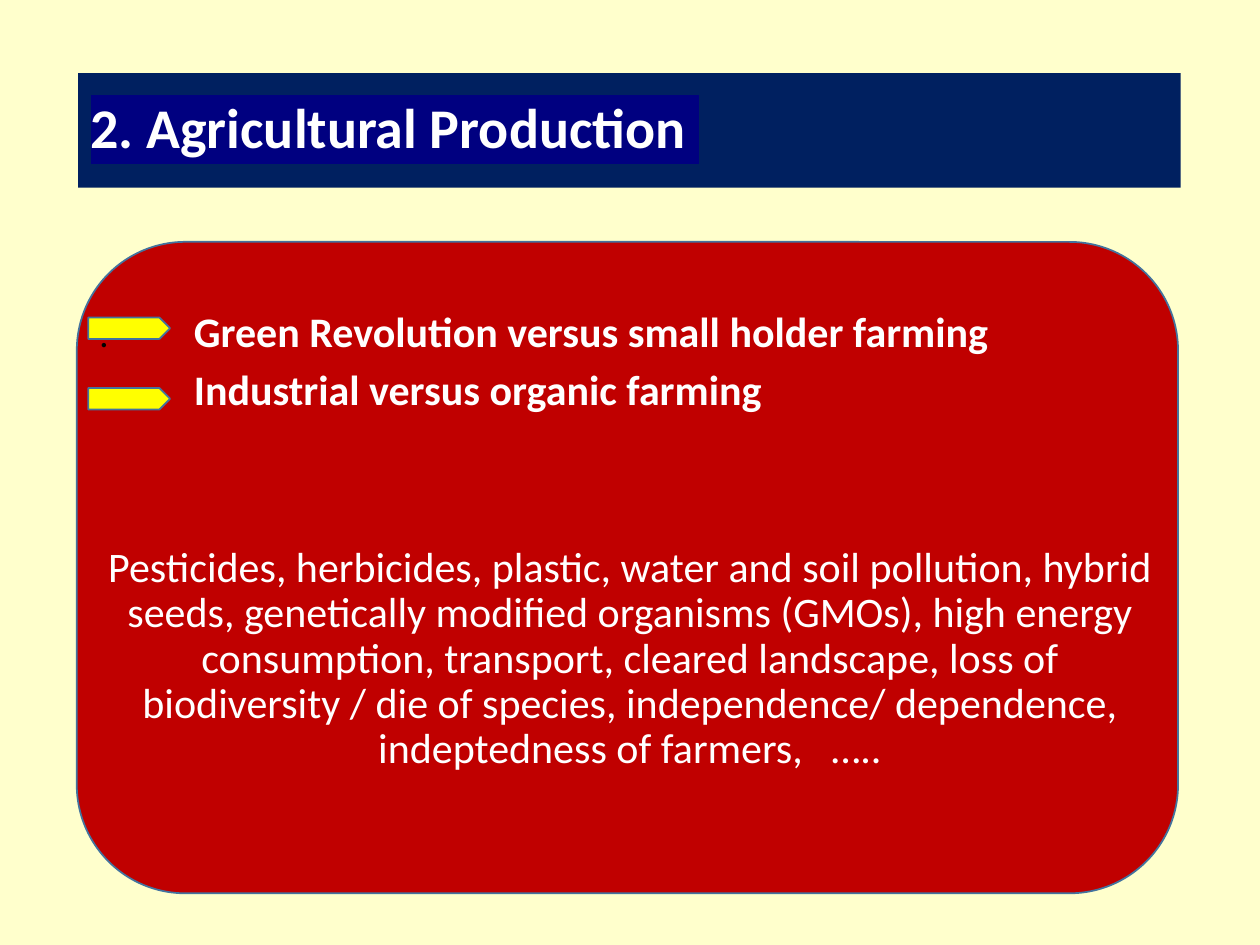
from pptx import Presentation
from pptx.dml.color import RGBColor as RGB
from pptx.enum.shapes import MSO_SHAPE as Kind
from pptx.enum.text import MSO_ANCHOR as Anchor, PP_ALIGN as Align
from pptx.oxml.ns import qn
from pptx.util import Inches, Pt
from lxml.etree import SubElement

TITLE = "2. Agricultural Production "
TOPICS = [
    (".", "Green Revolution versus small holder farming"),
    ("", "Industrial versus organic farming"),
]
IMPACTS = (
    "Pesticides, herbicides, plastic, water and soil pollution, hybrid seeds, "
    "genetically modified organisms (GMOs), high energy consumption, transport, "
    "cleared landscape, loss of biodiversity / die of species, "
    "independence/ dependence, indeptedness of farmers,   ….."
)
THEME = dict(
    font="Calibri", paper="FFFFCC", navy="002060", mark="000080", panel="C00000",
    edge="43739E", arrow="FFFF00", light="FFFFFF", dark="000000",
    head=32, body=24, dot=21, gap=7.5, leap=75,
)


def color(name):
    return RGB.from_string(THEME[name])


def write(para, text, size="body", ink="light", bold=False, mark=None):
    run = para.add_run()
    run.text = text
    font = run.font
    font.size, font.bold = Pt(THEME[size]), bold
    font.color.rgb = color(ink)
    if mark:
        glow = SubElement(font._element, qn("a:highlight"))
        SubElement(glow, qn("a:srgbClr")).set("val", THEME[mark])
    font.name = THEME["font"]


def layout(para, align=Align.LEFT, before=None, hang=0):
    para.alignment = align
    para.line_spacing = 0.9
    if before:
        para.space_before = Pt(THEME[before])
    if hang:
        props = para._p.get_or_add_pPr()
        props.set("marL", str(Inches(hang)))
        props.set("indent", str(-Inches(hang)))
    return para


def draw(slide, kind, box, fill, edge=None):
    shape = slide.shapes.add_shape(kind, *map(Inches, box))
    shape.shadow.inherit = False
    shape.fill.solid()
    shape.fill.fore_color.rgb = color(fill)
    if edge:
        shape.line.color.rgb = color(edge)
        shape.line.width = Pt(1)
    else:
        shape.line.fill.background()
    return shape


def main():
    deck = Presentation()
    deck.slide_width, deck.slide_height = Inches(10), Inches(7.5)
    slide = deck.slides.add_slide(deck.slide_layouts[6])
    slide.background.fill.solid()
    slide.background.fill.fore_color.rgb = color("paper")

    title = draw(slide, Kind.RECTANGLE, (0.62, 0.58, 8.75, 0.91), "navy").text_frame
    title.vertical_anchor = Anchor.MIDDLE
    title.word_wrap = True
    write(layout(title.paragraphs[0]), TITLE, size="head", bold=True, mark="mark")

    draw(slide, Kind.ROUNDED_RECTANGLE, (0.61, 1.92, 8.74, 5.17), "panel", "edge")

    body = slide.shapes.add_textbox(*map(Inches, (0.69, 2.42, 8.62, 4.34))).text_frame
    body.word_wrap = True
    for row, (dot, topic) in enumerate(TOPICS):
        para = body.add_paragraph() if row else body.paragraphs[0]
        layout(para, before="gap", hang=0.75)
        write(para, dot + "\t", size="dot", ink="dark")
        write(para, topic, bold=True)
    write(layout(body.add_paragraph(), Align.CENTER, "leap"), IMPACTS)

    for row in range(len(TOPICS)):
        draw(slide, Kind.PENTAGON, (0.7, 2.52 + 0.56 * row, 0.65, 0.17), "arrow", "edge")

    deck.save("out.pptx")


if __name__ == "__main__":
    main()
